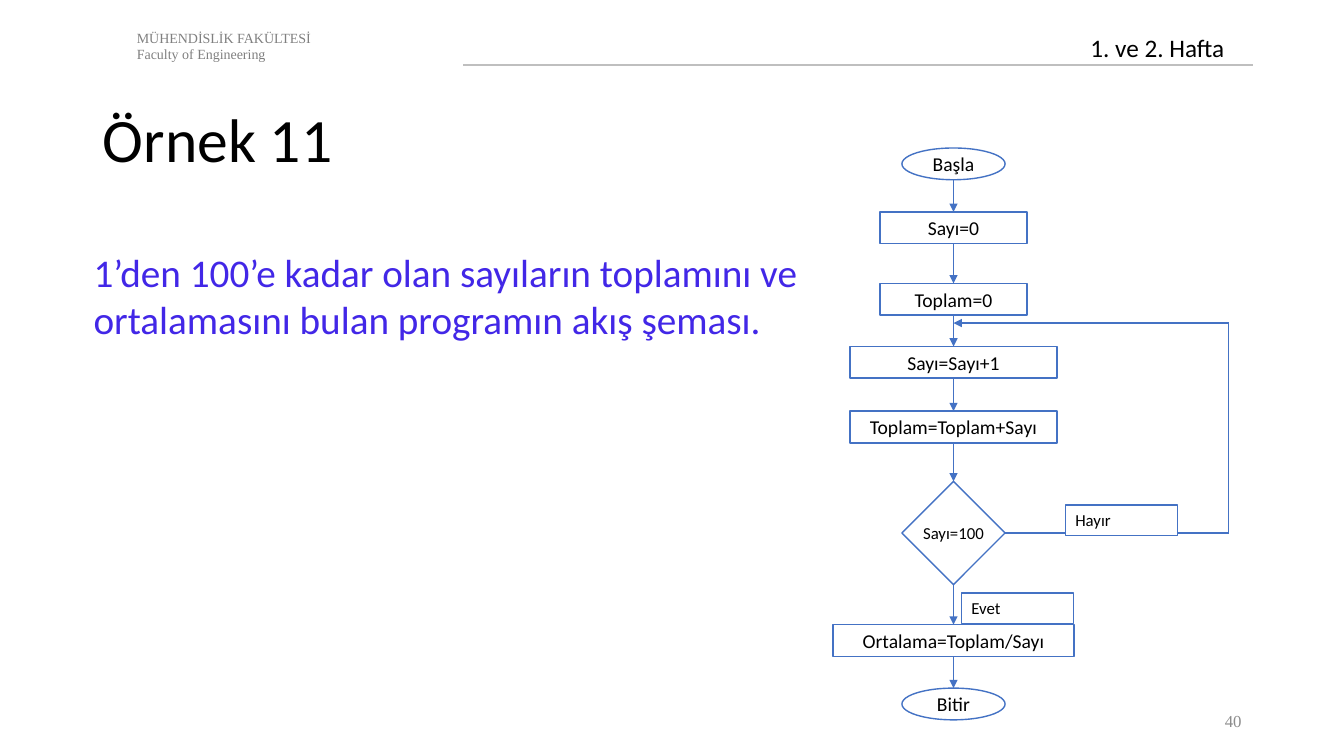
from itertools import pairwise

from lxml import etree
from pptx import Presentation
from pptx.dml.color import RGBColor
from pptx.enum import shapes, text
from pptx.oxml.ns import qn
from pptx.util import Cm, Pt

BLUE, BLACK, WHITE, GREY = "4472C4", "000000", "FFFFFF", "808080"
LEFT, CENTER, RIGHT = text.PP_ALIGN.LEFT, text.PP_ALIGN.CENTER, text.PP_ALIGN.RIGHT
TOP, MIDDLE = text.MSO_ANCHOR.TOP, text.MSO_ANCHOR.MIDDLE
RECT, OVAL, DIAMOND = (shapes.MSO_SHAPE.RECTANGLE, shapes.MSO_SHAPE.OVAL,
                       shapes.MSO_SHAPE.DIAMOND)

presentation = Presentation()
presentation.slide_width, presentation.slide_height = Cm(33.87), Cm(19.05)
slide = presentation.slides.add_slide(presentation.slide_layouts[5])


def write(holder, words, size, color=BLACK, font="Calibri", align=LEFT,
          anchor=TOP, wrap=True):
    frame = holder.text_frame
    frame.text = words
    frame.word_wrap = wrap
    frame.vertical_anchor = anchor
    for paragraph in frame.paragraphs:
        paragraph.alignment = align
        for run in paragraph.runs:
            run.font.size, run.font.name = Pt(size), font
            run.font.color.rgb = RGBColor.from_string(color)


def connect(x1, y1, x2, y2, color=BLUE, width=1, arrow=False):
    line = slide.shapes.add_connector(
        shapes.MSO_CONNECTOR.STRAIGHT, Cm(x1), Cm(y1), Cm(x2), Cm(y2))
    line.line.color.rgb = RGBColor.from_string(color)
    line.line.width = Pt(width)
    properties = line._element.spPr
    etree.SubElement(properties, qn("a:effectLst"))
    if arrow:
        outline = properties.find(qn("a:ln"))
        etree.SubElement(outline, qn("a:tailEnd"), type="triangle")


# Header rule, title and plain texts
connect(11.68, 1.63, 31.57, 1.63, "BFBFBF", 1.5)

title = slide.shapes.title
title.left, title.top, title.width, title.height = Cm(2.34), Cm(2.49), Cm(29.21), Cm(2.21)
write(title, "Örnek 11", 44, anchor=MIDDLE)
title.text_frame.paragraphs[0].line_spacing = 0.9

SERIF = "Times New Roman"
for left, top, width, height, words, size, color, font, align, anchor in [
    (3.2, 0.61, 16.94, 1.12, "MÜHENDİSLİK FAKÜLTESİ\nFaculty of Engineering",
     10, GREY, SERIF, LEFT, TOP),
    (27.23, 0.69, 4.32, 1.02, "1. ve 2. Hafta", 18, BLACK, "Calibri", LEFT, TOP),
    (30.4, 17.65, 1.14, 1.02, "40", 12, "8C8C8C", SERIF, RIGHT, MIDDLE),
    (2.11, 6.12, 18.62, 2.64,
     "1’den 100’e kadar olan sayıların toplamını ve ortalamasını bulan "
     "programın akış şeması.", 28, "4227E7", "Calibri", LEFT, TOP),
]:
    box = slide.shapes.add_textbox(Cm(left), Cm(top), Cm(width), Cm(height))
    write(box, words, size, color, font, align, anchor)

# Flowchart: steps share one vertical axis
axis = 24.03
steps = [  # outline, top, width, height, words, size
    (OVAL, 3.73, 2.6, 0.8, "Başla", 14),
    (RECT, 5.34, 3.7, 0.8, "Sayı=0", 14),
    (RECT, 7.14, 3.7, 0.8, "Toplam=0", 14),
    (RECT, 8.73, 5.22, 0.8, "Sayı=Sayı+1", 14),
    (RECT, 10.36, 5.22, 0.8, "Toplam=Toplam+Sayı", 14),
    (DIAMOND, 12.13, 2.6, 2.6, "Sayı=100", 12),
    (RECT, 15.74, 6.08, 0.8, "Ortalama=Toplam/Sayı", 14),
    (OVAL, 17.34, 2.6, 0.8, "Bitir", 14),
]
for (_, top, _, height, *_), (_, next_top, *_) in pairwise(steps):
    connect(axis, top + height, axis, next_top, arrow=True)

# Loop back from the decision to the counter
loop_x, decision_y, return_y = 30.96, 13.43, 8.14
connect(axis + 1.3, decision_y, loop_x, decision_y)
connect(loop_x, decision_y, loop_x, return_y)
connect(loop_x, return_y, axis, return_y, arrow=True)

# Step boxes, then the two branch labels
boxes = [(outline, axis - width / 2, top, width, height, words, size, CENTER, MIDDLE, False)
         for outline, top, width, height, words, size in steps]
boxes += [(RECT, left, top, 2.82, 0.77, words, 12, LEFT, TOP, True)
          for left, top, words in [(26.85, 12.73, "Hayır"), (24.23, 14.94, "Evet")]]
for outline, left, top, width, height, words, size, align, anchor, wrap in boxes:
    node = slide.shapes.add_shape(outline, Cm(left), Cm(top), Cm(width), Cm(height))
    node.shadow.inherit = False
    node.fill.solid()
    node.fill.fore_color.rgb = RGBColor.from_string(WHITE)
    node.line.color.rgb = RGBColor.from_string(BLUE)
    node.line.width = Pt(1)
    write(node, words, size, align=align, anchor=anchor, wrap=wrap)

presentation.save("out.pptx")
